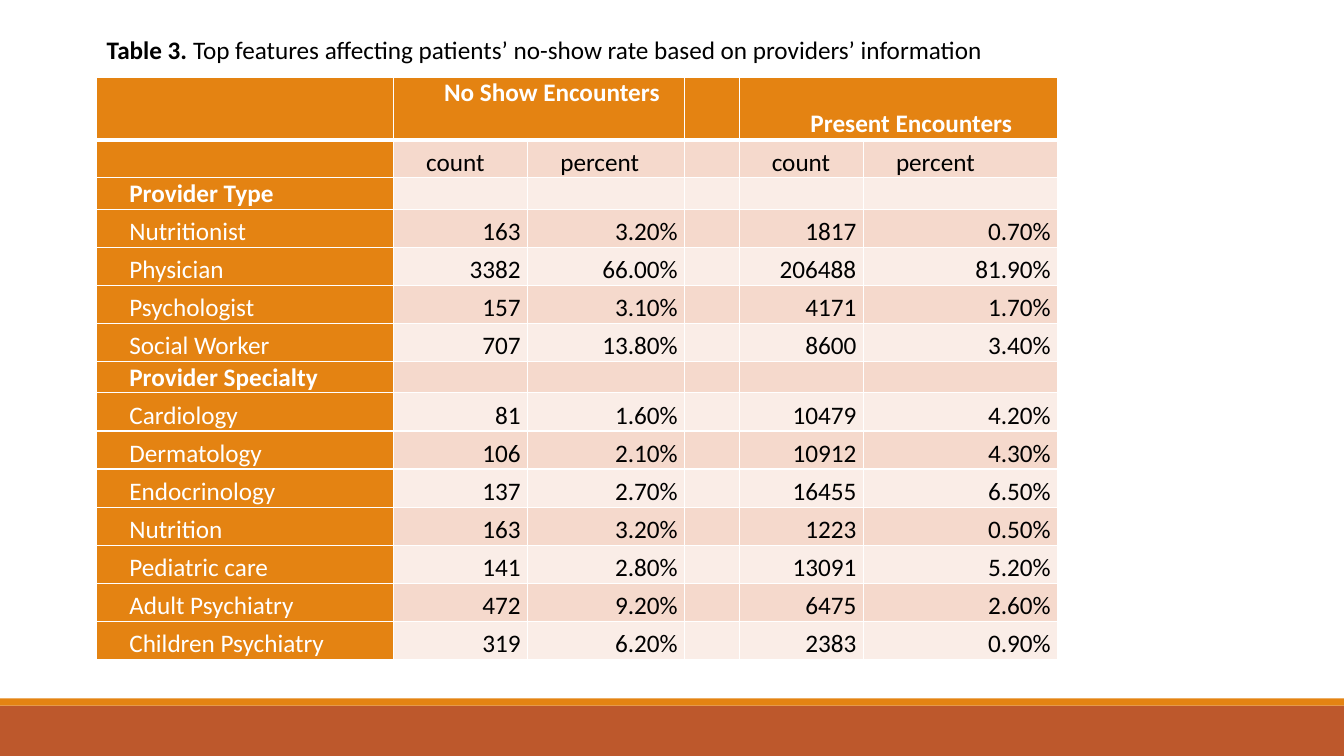
from lxml.etree import SubElement as Sub
from pptx import Presentation
from pptx.dml.color import RGBColor as RGB
from pptx.enum.shapes import MSO_SHAPE as Shape
from pptx.enum.text import MSO_ANCHOR as Anchor, PP_ALIGN as Align
from pptx.oxml.ns import qn
from pptx.util import Cm, Pt

WHITE = RGB(0xFF, 0xFF, 0xFF)
BLACK = RGB(0, 0, 0)
ORANGE = RGB(0xE4, 0x83, 0x12)
RUST = RGB(0xBD, 0x58, 0x2C)
BANDS = RGB(0xFA, 0xED, 0xE7), RGB(0xF5, 0xD9, 0xCC)

WIDTHS = Cm(7.48), Cm(3.38), Cm(3.96), Cm(1.37), Cm(3.13), Cm(4.9)
HEAD, SECTION, ROW = Cm(1.56), Cm(0.79), Cm(0.96)

ROWS = [
    ("", "No Show Encounters", "", "", "Present Encounters", ""),
    ("", "count", "percent", "", "count", "percent"),
    ("Provider Type", "", "", "", "", ""),
    ("Nutritionist", "163", "3.20%", "", "1817", "0.70%"),
    ("Physician", "3382", "66.00%", "", "206488", "81.90%"),
    ("Psychologist", "157", "3.10%", "", "4171", "1.70%"),
    ("Social Worker", "707", "13.80%", "", "8600", "3.40%"),
    ("Provider Specialty", "", "", "", "", ""),
    ("Cardiology", "81", "1.60%", "", "10479", "4.20%"),
    ("Dermatology", "106", "2.10%", "", "10912", "4.30%"),
    ("Endocrinology", "137", "2.70%", "", "16455", "6.50%"),
    ("Nutrition", "163", "3.20%", "", "1223", "0.50%"),
    ("Pediatric care", "141", "2.80%", "", "13091", "5.20%"),
    ("Adult Psychiatry", "472", "9.20%", "", "6475", "2.60%"),
    ("Children Psychiatry", "319", "6.20%", "", "2383", "0.90%"),
]


def write(frame, text, color=BLACK, bold=False, align=Align.LEFT, indent=0):
    """Add a run to the first paragraph of the frame."""
    para = frame.paragraphs[0]
    para.alignment = align
    if indent:
        para._p.get_or_add_pPr().set("indent", str(indent))
    run = para.add_run()
    run.text = text
    font = run.font
    font.name, font.size, font.bold = "Calibri", Pt(18), bold
    font.color.rgb = color


def edge(cell, row):
    """Draw white cell borders, thick under the header row."""
    thick = {"lnT": row == 1, "lnB": row == 0}
    for side in ("lnL", "lnR", "lnT", "lnB"):
        width = Pt(3) if thick.get(side) else Pt(1)
        line = Sub(cell._tc.get_or_add_tcPr(), qn(f"a:{side}"), w=str(width))
        Sub(Sub(line, qn("a:solidFill")), qn("a:srgbClr"), val=str(WHITE))


def style(cell, row, col):
    edge(cell, row)
    cell.margin_left = cell.margin_right = Cm(0.18)
    cell.margin_top = cell.margin_bottom = 0
    cell.vertical_anchor = Anchor.BOTTOM
    cell.fill.solid()
    cell.fill.fore_color.rgb = ORANGE if row == 0 or col == 0 else BANDS[row % 2]


def add_title(slide, left, top, width, height):
    frame = slide.shapes.add_textbox(left, top, width, height).text_frame
    frame.word_wrap = True
    write(frame, "Table 3. ", bold=True)
    write(frame, "Top features affecting patients’ no-show rate "
                 "based on providers’ information")


def add_grid(slide, left, top):
    heights = [HEAD if i == 0 else ROW if any(row[1:]) else SECTION
               for i, row in enumerate(ROWS)]
    table = slide.shapes.add_table(len(ROWS), len(WIDTHS), left, top,
                                   sum(WIDTHS), sum(heights)).table
    table.first_row = table.horz_banding = False
    for col, width in zip(table.columns, WIDTHS):
        col.width = width
    for line, height in zip(table.rows, heights):
        line.height = height
    for i, row in enumerate(ROWS):
        for j, text in enumerate(row):
            cell = table.cell(i, j)
            style(cell, i, j)
            if text:
                align = (Align.CENTER if i == 0 else
                         Align.RIGHT if i > 1 and j else Align.LEFT)
                write(cell.text_frame, text, align=align, indent=Cm(0.64),
                      color=WHITE if i == 0 or j == 0 else BLACK,
                      bold=i == 0 or heights[i] == SECTION)
    for j in (1, 4):
        table.cell(0, j).merge(table.cell(0, j + 1))
    table.cell(0, 1).vertical_anchor = Anchor.TOP


def add_bar(slide, left, top, width, height, color):
    bar = slide.shapes.add_shape(Shape.RECTANGLE, left, top, width, height)
    bar.shadow.inherit = False
    bar.fill.solid()
    bar.fill.fore_color.rgb = color
    bar.line.fill.background()


def add_foot(slide, left, top, width, height):
    strip = Cm(0.18)
    add_bar(slide, left, top + strip, width, height - strip, RUST)
    add_bar(slide, left, top, width, strip, ORANGE)


def main():
    deck = Presentation()
    deck.slide_width, deck.slide_height = Cm(33.87), Cm(19.05)
    slide = deck.slides.add_slide(deck.slide_layouts[6])
    foot = Cm(1.45)
    add_foot(slide, 0, deck.slide_height - foot, deck.slide_width, foot)
    left = Cm(2.44)
    add_grid(slide, left, Cm(1.96))
    add_title(slide, left, Cm(0.74), sum(WIDTHS), Cm(1.02))
    deck.save("out.pptx")


if __name__ == "__main__":
    main()
